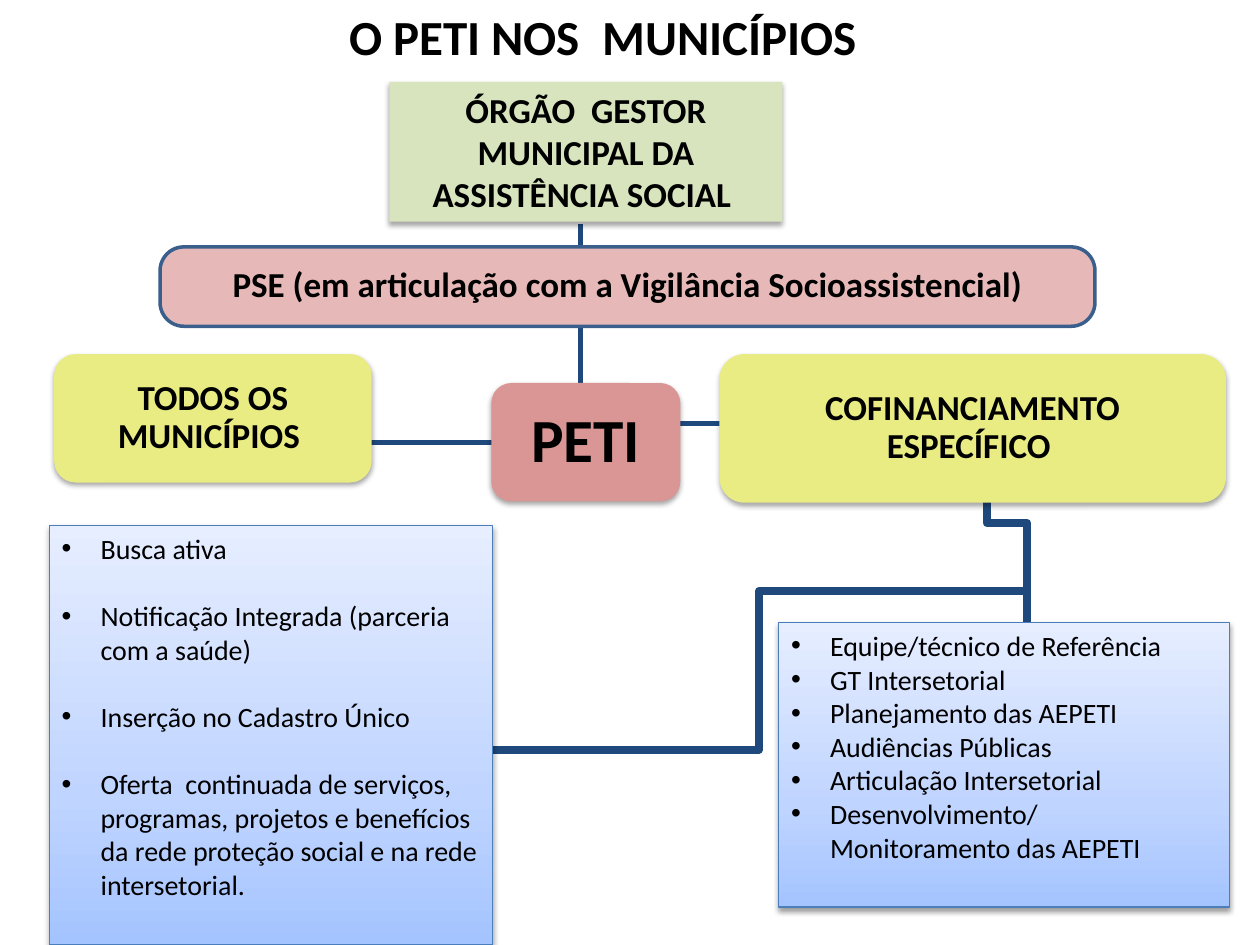
from lxml import etree
from pptx import Presentation
from pptx.dml.color import RGBColor
from pptx.enum.shapes import MSO_CONNECTOR, MSO_SHAPE
from pptx.enum.text import MSO_ANCHOR, PP_ALIGN
from pptx.oxml.ns import qn
from pptx.util import Inches, Pt

STRAIGHT = MSO_CONNECTOR.STRAIGHT
ELBOW = MSO_CONNECTOR.ELBOW
RECTANGLE = MSO_SHAPE.RECTANGLE
ROUNDED = MSO_SHAPE.ROUNDED_RECTANGLE
TOP, MIDDLE = MSO_ANCHOR.TOP, MSO_ANCHOR.MIDDLE
LEFT, CENTER = PP_ALIGN.LEFT, PP_ALIGN.CENTER

FONT = "Calibri"
COLORS = {
    "text": "000000",
    "connector": "1F497D",
    "manager": "D7E4BD",
    "protection": "E6B9B8",
    "protection_line": "3A5F8C",
    "program": "D99694",
    "scope": "E9EB83",
    "list_line": "4B7EBC",
    "list_bottom": "A4C4FF",
    "list_middle": "BFD4FF",
    "list_top": "E6EEFF",
}
ALL_CITIES_ITEMS = [
    "Busca ativa",
    "Notificação Integrada (parceria com a saúde)",
    "Inserção no Cadastro Único",
    "Oferta  continuada de serviços, programas, projetos e benefícios "
    "da rede proteção social e na rede intersetorial.",
]
FUNDED_ITEMS = [
    "Equipe/técnico de Referência",
    "GT Intersetorial",
    "Planejamento das AEPETI",
    "Audiências Públicas",
    "Articulação Intersetorial",
    "Desenvolvimento/Monitoramento das AEPETI",
]


def color(name):
    return RGBColor.from_string(COLORS[name])


def add_run(paragraph, text, size, bold):
    run = paragraph.add_run()
    run.text = text
    run.font.name = FONT
    run.font.size = Pt(size)
    run.font.bold = bold
    run.font.color.rgb = color("text")


def add_shadow(shape, opacity):
    shape.shadow.inherit = False
    effects = shape._element.spPr.find(qn("a:effectLst"))
    shadow = etree.SubElement(
        effects, qn("a:outerShdw"), blurRad=str(Pt(3.1)), dist=str(Pt(1.7)),
        dir="5400000", rotWithShape="0")
    shade = etree.SubElement(shadow, qn("a:srgbClr"), val="000000")
    etree.SubElement(shade, qn("a:alpha"), val=str(opacity * 1000))


def add_link(slide, kind, start, end, width, rotation=0):
    connector = slide.shapes.add_connector(
        kind, *(Inches(value) for value in start + end))
    connector.line.color.rgb = color("connector")
    connector.line.width = Pt(width)
    properties = connector._element.spPr
    etree.SubElement(properties, qn("a:effectLst"))
    if rotation:
        properties.find(qn("a:xfrm")).set("rot", str(rotation * 60000))


def add_title(slide, box, text):
    frame = slide.shapes.add_textbox(*map(Inches, box)).text_frame
    frame.word_wrap = True
    paragraph = frame.paragraphs[0]
    paragraph.alignment = CENTER
    add_run(paragraph, text, 28, True)


def add_box(slide, box, text, fill, kind=ROUNDED, size=20, inset=0.15,
            corner=0.17, outline=None):
    shape = slide.shapes.add_shape(kind, *map(Inches, box))
    shape.fill.solid()
    shape.fill.fore_color.rgb = color(fill)
    if outline:
        shape.line.color.rgb = color(outline)
        shape.line.width = Pt(2)
        shape.shadow.inherit = False
    else:
        shape.line.fill.background()
        add_shadow(shape, 35)
    frame = shape.text_frame
    frame.word_wrap = True
    paragraph = frame.paragraphs[0]
    paragraph.alignment = CENTER
    if kind == ROUNDED:
        shape.adjustments[0] = corner
        frame.vertical_anchor = MIDDLE
        frame.margin_left = frame.margin_right = Inches(inset)
        frame.margin_top = frame.margin_bottom = Inches(inset)
        paragraph.line_spacing = 0.9
    else:
        frame.vertical_anchor = TOP
    add_run(paragraph, text, size, True)


def fill_gradient(shape):
    shape.fill.gradient()
    shape.fill.gradient_angle = 90
    stops = shape._element.spPr.find(qn("a:gradFill")).find(qn("a:gsLst"))
    for stop in list(stops):
        stops.remove(stop)
    for position, name in ((0, "list_bottom"), (35, "list_middle"), (100, "list_top")):
        stop = etree.SubElement(stops, qn("a:gs"), pos=str(position * 1000))
        etree.SubElement(stop, qn("a:srgbClr"), val=COLORS[name])


def add_list(slide, box, items, gap=0):
    shape = slide.shapes.add_shape(RECTANGLE, *map(Inches, box))
    fill_gradient(shape)
    shape.line.color.rgb = color("list_line")
    shape.line.width = Pt(0.75)
    add_shadow(shape, 38)
    frame = shape.text_frame
    frame.word_wrap = True
    frame.vertical_anchor = TOP
    for index, item in enumerate(items):
        paragraph = frame.add_paragraph() if index else frame.paragraphs[0]
        paragraph.alignment = LEFT
        paragraph.space_before = Pt(gap if index else 0)
        properties = paragraph._p.get_or_add_pPr()
        properties.set("marL", str(Inches(0.31)))
        properties.set("indent", str(-Inches(0.31)))
        etree.SubElement(properties, qn("a:buFont"), typeface="Arial")
        etree.SubElement(properties, qn("a:buChar"), char="•")
        add_run(paragraph, item, 16, False)


def add_links(slide):
    add_link(slide, ELBOW, (3.9, 5.95), (8.15, 4.69), 4.5)
    add_link(slide, ELBOW, (9.33, 3.99), (6.65, 4.31), 4.5, rotation=270)
    add_link(slide, STRAIGHT, (4.61, 1.78), (4.61, 3.44), 3)
    add_link(slide, STRAIGHT, (2.32, 3.51), (4.06, 3.51), 3)
    add_link(slide, STRAIGHT, (7.76, 3.36), (5, 3.36), 3)


def build_slide(slide):
    add_links(slide)
    add_title(slide, (0.62, 0, 8.33, 0.57), "O PETI NOS  MUNICÍPIOS")
    add_box(slide, (3.09, 0.65, 3.12, 1.11),
            "ÓRGÃO  GESTOR MUNICIPAL DA ASSISTÊNCIA SOCIAL ", "manager", RECTANGLE)
    add_box(slide, (1.27, 1.96, 7.42, 0.63),
            "PSE (em articulação com a Vigilância Socioassistencial)",
            "protection", corner=0.3, outline="protection_line")
    add_box(slide, (3.9, 3.04, 1.5, 0.94), "PETI", "program", size=35, inset=0.18)
    add_box(slide, (0.43, 2.81, 2.52, 1.02), "TODOS OS MUNICÍPIOS ", "scope")
    add_box(slide, (5.71, 2.81, 4.02, 1.18), "COFINANCIAMENTO ESPECÍFICO ", "scope")
    add_list(slide, (0.39, 4.17, 3.52, 3.33), ALL_CITIES_ITEMS, gap=19.2)
    add_list(slide, (6.18, 4.94, 3.58, 2.26), FUNDED_ITEMS)


def main():
    presentation = Presentation()
    presentation.slide_width = Inches(10)
    presentation.slide_height = Inches(7.5)
    build_slide(presentation.slides.add_slide(presentation.slide_layouts[6]))
    presentation.save("out.pptx")


if __name__ == "__main__":
    main()
